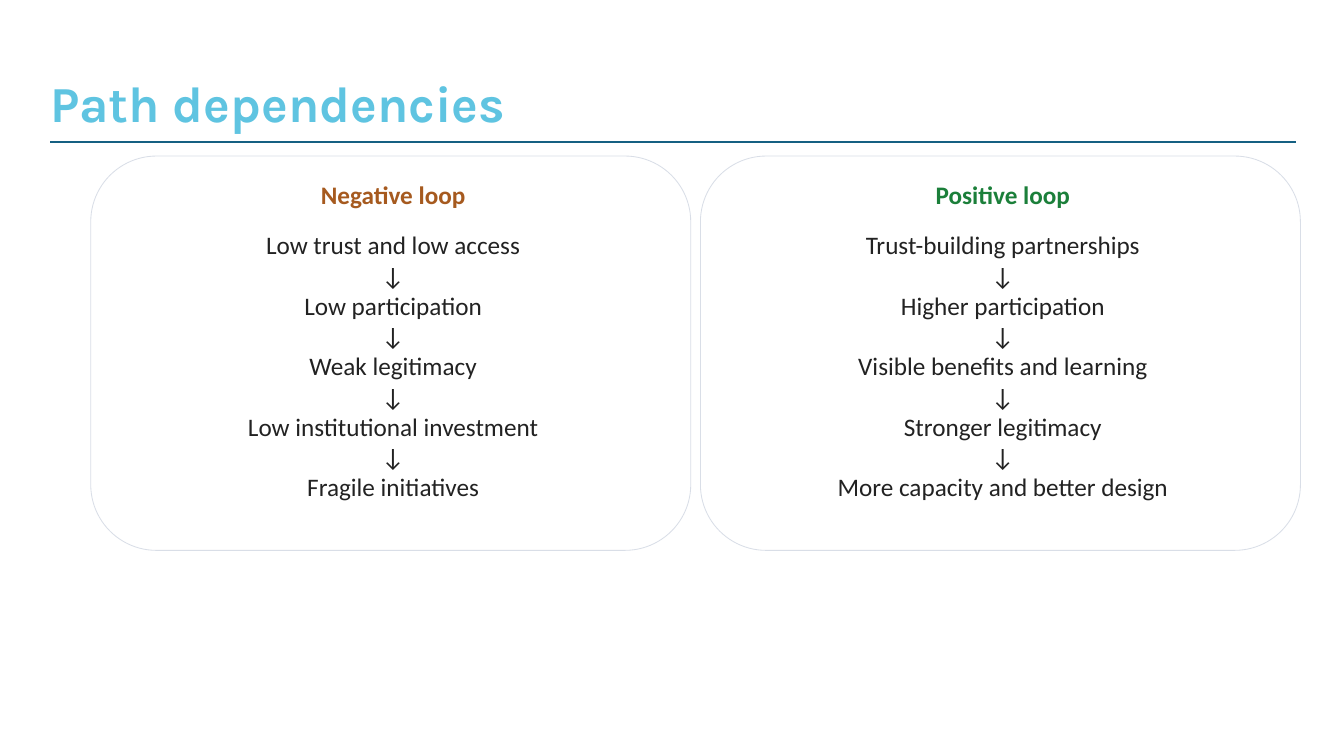
from lxml.etree import SubElement
from pptx import Presentation
from pptx.dml.color import RGBColor
from pptx.enum.shapes import MSO_CONNECTOR, MSO_SHAPE
from pptx.enum.text import MSO_ANCHOR, PP_ALIGN
from pptx.oxml.ns import qn
from pptx.util import Inches, Pt

COLORS = {
    "title": "5FC4E1",
    "rule": "156082",
    "card": "FFFFFF",
    "border": "D9DEE7",
    "negative": "A65A1F",
    "positive": "1B7F3A",
    "body": "222222",
}

LOOPS = [
    ("Negative loop", "negative", [
        "Low trust and low access",
        "Low participation",
        "Weak legitimacy",
        "Low institutional investment",
        "Fragile initiatives",
    ]),
    ("Positive loop", "positive", [
        "Trust-building partnerships",
        "Higher participation",
        "Visible benefits and learning",
        "Stronger legitimacy",
        "More capacity and better design",
    ]),
]


def format_paragraph(paragraph, color, alignment, **font_values):
    paragraph.alignment = alignment
    for name, value in font_values.items():
        setattr(paragraph.font, name, value)
    paragraph.font.color.rgb = RGBColor.from_string(COLORS[color])


def add_centered_text(slide, left, top, height, lines, anchor, color, bold):
    text_box = slide.shapes.add_textbox(Inches(left), Inches(top), Inches(9), Inches(height))
    text_frame = text_box.text_frame
    text_frame.word_wrap = True
    text_frame.vertical_anchor = anchor
    text_frame.text = "\n".join(lines)
    for paragraph in text_frame.paragraphs:
        format_paragraph(paragraph, color, PP_ALIGN.CENTER,
                         name="Calibri", size=Pt(30), bold=bold)


presentation = Presentation()
presentation.slide_width = Inches(22.22)
presentation.slide_height = Inches(12.5)
slide = presentation.slides.add_slide(presentation.slide_layouts[5])

rule = slide.shapes.add_connector(
    MSO_CONNECTOR.STRAIGHT, Inches(0.83), Inches(2.35), Inches(21.42), Inches(2.35))
rule.line.color.rgb = RGBColor.from_string(COLORS["rule"])
rule.line.width = Pt(1.5)
SubElement(rule.element.spPr, qn("a:effectLst"))

title = slide.shapes.title
title_place = {"left": 0.73, "top": 1.26, "width": 16.67, "height": 0.85}
for name, value in title_place.items():
    setattr(title, name, Inches(value))
title.text_frame.text = "Path dependencies"
title.text_frame.vertical_anchor = MSO_ANCHOR.TOP
title_paragraph = title.text_frame.paragraphs[0]
title_paragraph.line_spacing = 0.9
format_paragraph(title_paragraph, "title", PP_ALIGN.LEFT,
                 name="Karla", size=Pt(60), bold=True)

for index, (heading, heading_color, steps) in enumerate(LOOPS):
    card_left = 1.5 + index * 10.08
    card = slide.shapes.add_shape(
        MSO_SHAPE.ROUNDED_RECTANGLE,
        Inches(card_left), Inches(2.58), Inches(9.92), Inches(6.52))
    card.shadow.inherit = False
    card.fill.solid()
    card.fill.fore_color.rgb = RGBColor.from_string(COLORS["card"])
    card.line.color.rgb = RGBColor.from_string(COLORS["border"])
    card.line.width = Pt(1)

    text_left = card_left + 0.5
    add_centered_text(slide, text_left, 2.92, 0.58, [heading],
                      MSO_ANCHOR.MIDDLE, heading_color, True)
    step_lines = "\n↓\n".join(steps).split("\n")
    add_centered_text(slide, text_left, 3.75, 7, step_lines,
                      MSO_ANCHOR.TOP, "body", False)

presentation.save("out.pptx")
